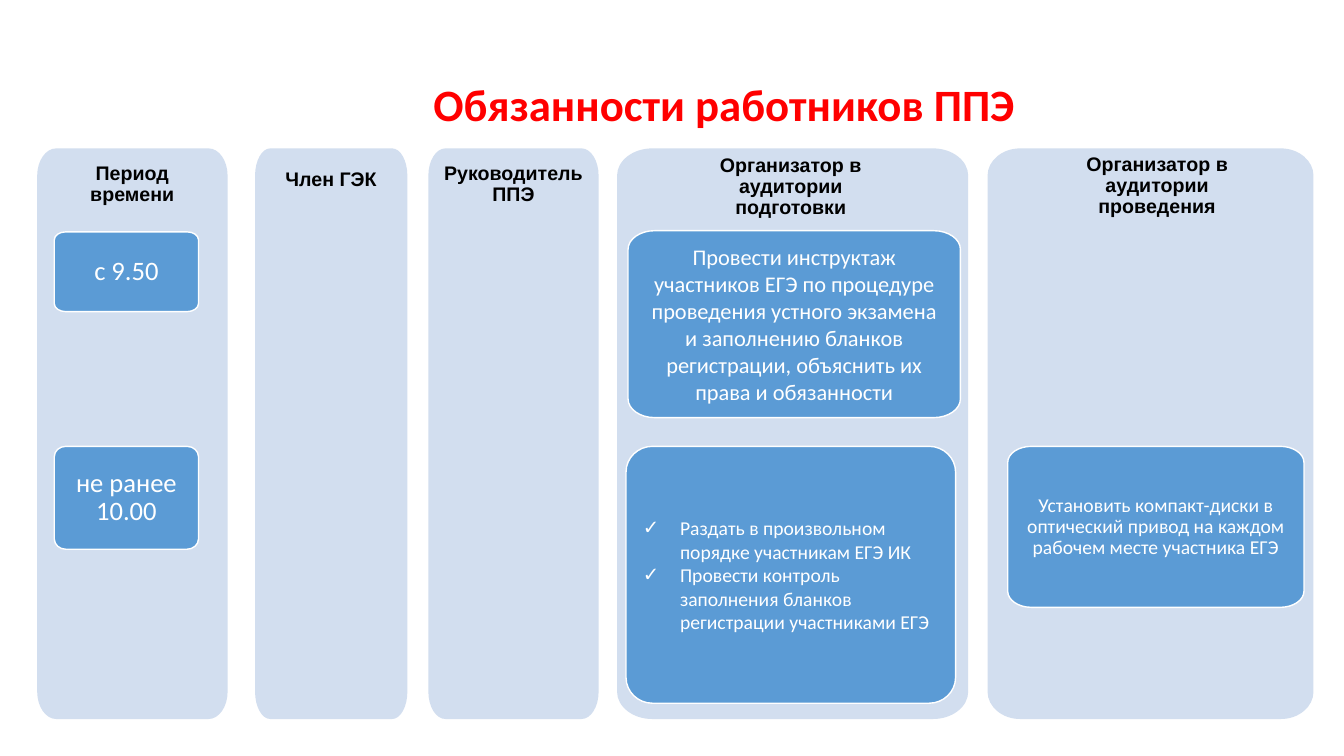
from lxml.etree import SubElement
from pptx import Presentation
from pptx.dml.color import RGBColor
from pptx.enum.text import MSO_ANCHOR, MSO_AUTO_SIZE, PP_ALIGN
from pptx.oxml.ns import qn
from pptx.util import Pt

COLORS = {
    "column": "D2DEEF",
    "card": "5B9BD5",
    "white": "FFFFFF",
    "heading": "000000",
    "title": "FF0000",
}
COLUMN_TOP, COLUMN_HEIGHT = 106, 407.6
CURVE = 0.55
BULLET_INDENT = 26.6

# left and width of each column, then its heading: text, left, top, width, height, wrap
COLUMNS = [
    (26.6, 136, ("Период времени", 34, 112.5, 121, 39, True)),
    (182.2, 108.8, ("Член ГЭК", 195, 116.5, 83, 24, False)),
    (306, 121.6, ("Руководитель ППЭ", 292.6, 112.5, 148.4, 39, True)),
    (440.8, 250.8, ("Организатор в аудитории подготовки", 484.6, 106.6, 160.5, 55, True)),
    (705.4, 232.8, ("Организатор в аудитории проведения", 748.8, 106, 155.5, 55, True)),
]

# lines, left, top, width, height, font size, line spacing, bulleted
CARDS = [
    (["Установить компакт-диски в оптический привод на каждом рабочем месте участника ЕГЭ"],
     719.8, 318.8, 211.6, 115, 14, 0.9, False),
    (["Раздать в произвольном порядке участникам ЕГЭ ИК",
      "Провести контроль заполнения бланков регистрации участниками ЕГЭ"],
     447.2, 318.8, 235.4, 183.5, 14, 1.0, True),
    (["Провести инструктаж участников ЕГЭ по процедуре проведения устного экзамена "
      "и заполнению бланков регистрации, объяснить их права и обязанности"],
     448.6, 164.8, 237.4, 133.5, 16, 1.0, False),
    (["не ранее 10.00"], 38.8, 318.8, 103, 73.5, 19, 0.9, False),
    (["с 9.50"], 38.8, 165.6, 103, 57, 19, 0.9, False),
]


def rgb(name):
    return RGBColor.from_string(COLORS[name])


def add_rounded_panel(slide, left, top, width, height, radius_x, radius_y, color):
    """Draw a panel whose corners are quarter ellipses."""
    outline = [
        (0, radius_y), (radius_x, 0),
        (width - radius_x, 0), (width, radius_y),
        (width, height - radius_y), (width - radius_x, height),
        (radius_x, height), (0, height - radius_y),
    ]
    builder = slide.shapes.build_freeform(Pt(left), Pt(top + radius_y))
    builder.add_line_segments([(Pt(left + x), Pt(top + y)) for x, y in outline[1:]], close=True)
    panel = builder.convert_to_shape()

    # Turn the line across each corner into a curve
    corners = [(0, 0), (width, 0), (width, height), (0, height)]
    segments = list(panel._element.iter(qn("a:lnTo")))[::2]
    for index, (corner, segment) in enumerate(zip(corners, segments)):
        segment.tag = qn("a:cubicBezTo")
        end_point = segment[0]
        for anchor in outline[2 * index:2 * index + 2]:
            x, y = (a + CURVE * (c - a) for a, c in zip(anchor, corner))
            control = SubElement(segment, qn("a:pt"))
            control.set("x", str(Pt(x)))
            control.set("y", str(Pt(y)))
        segment.append(end_point)

    panel.shadow.inherit = False
    panel.fill.solid()
    panel.fill.fore_color.rgb = rgb(color)
    panel.line.fill.background()
    return panel


def set_margins(frame, horizontal, vertical):
    frame.margin_left = frame.margin_right = Pt(horizontal)
    frame.margin_top = frame.margin_bottom = Pt(vertical)


def add_check_mark(paragraph):
    properties = paragraph._p.get_or_add_pPr()
    properties.set("marL", str(Pt(BULLET_INDENT)))
    properties.set("indent", str(-Pt(BULLET_INDENT)))
    SubElement(properties, qn("a:buFont")).set("typeface", "Arial")
    SubElement(properties, qn("a:buChar")).set("char", "✓")


def format_paragraph(paragraph, font, size, color, bold, spacing, align):
    paragraph.alignment = align
    paragraph.line_spacing = spacing
    for run in paragraph.runs:
        run.font.name = font
        run.font.size = Pt(size)
        run.font.bold = bold
        run.font.color.rgb = rgb(color)


def add_card(slide, lines, left, top, width, height, size, spacing, bulleted):
    card = add_rounded_panel(slide, left, top, width, height,
                             0.08 * width, 0.1 * height, "card")
    card.line.color.rgb = rgb("white")
    card.line.width = Pt(1)
    frame = card.text_frame
    frame.word_wrap = True
    frame.vertical_anchor = MSO_ANCHOR.MIDDLE
    set_margins(frame, 12, 10)
    frame.text = "\n".join(lines)
    align = PP_ALIGN.LEFT if bulleted else PP_ALIGN.CENTER
    for paragraph in frame.paragraphs:
        if bulleted:
            add_check_mark(paragraph)
        format_paragraph(paragraph, "Calibri", size, "white", False, spacing, align)


def add_label(slide, text, left, top, width, height, wrap, font, size, color, spacing):
    label = slide.shapes.add_textbox(Pt(left), Pt(top), Pt(width), Pt(height))
    frame = label.text_frame
    frame.word_wrap = wrap
    frame.auto_size = MSO_AUTO_SIZE.SHAPE_TO_FIT_TEXT
    set_margins(frame, 8.5, 4.25)
    frame.text = text
    format_paragraph(frame.paragraphs[0], font, size, color, True, spacing, PP_ALIGN.CENTER)


def main():
    presentation = Presentation()
    presentation.slide_width, presentation.slide_height = Pt(960), Pt(540)
    slide = presentation.slides.add_slide(presentation.slide_layouts[6])

    # Columns
    for left, width, _ in COLUMNS:
        add_rounded_panel(slide, left, COLUMN_TOP, width, COLUMN_HEIGHT,
                          0.1 * width, 19.5, "column")

    # Duties and times
    for card in CARDS:
        add_card(slide, *card)

    # Column headings
    for _, _, heading in COLUMNS:
        add_label(slide, *heading, "Arial", 14, "heading", 0.9)

    # Title
    add_label(slide, "Обязанности работников ППЭ", 112.3, 50.4, 810, 47.5, True,
              "Calibri", 32, "title", 1.0)

    presentation.save("out.pptx")


if __name__ == "__main__":
    main()
